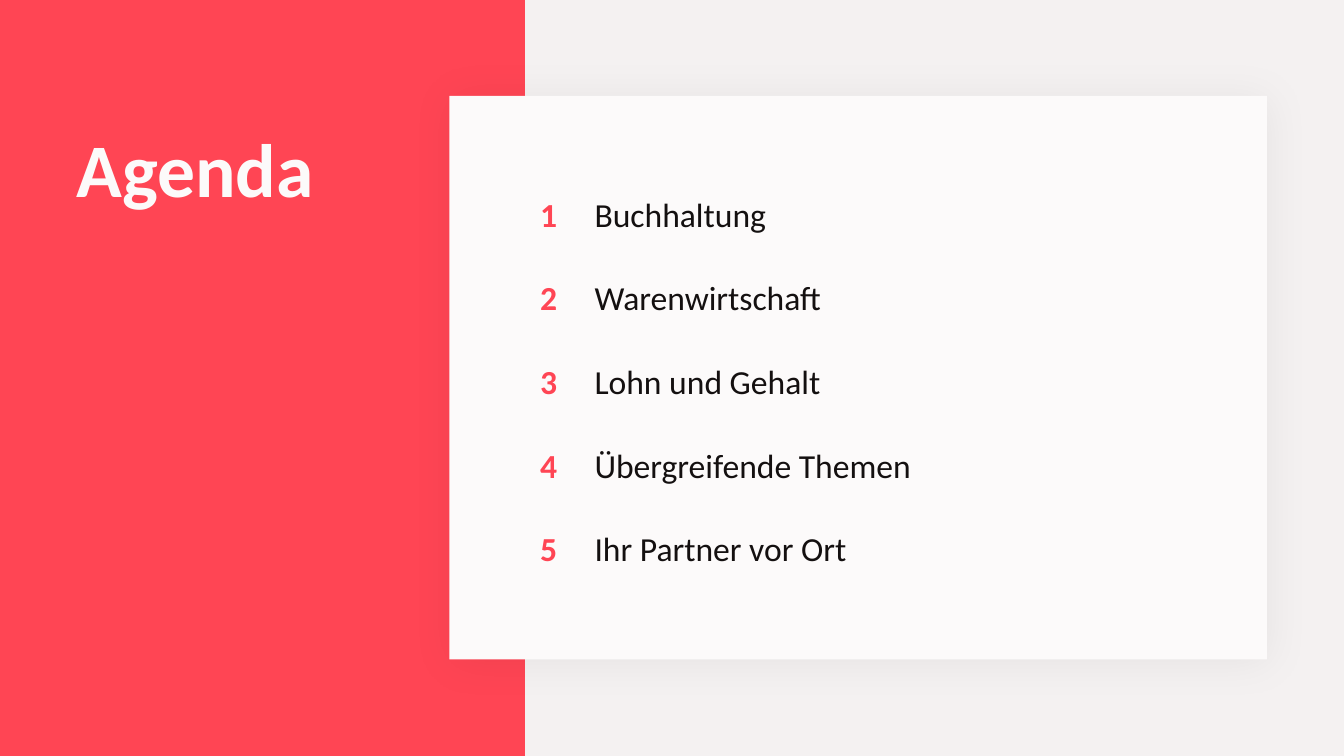
import pptx
import pptx.util
import pptx.dml.color
import pptx.enum.shapes
import pptx.enum.text
import pptx.oxml
import pptx.oxml.ns

Pt = pptx.util.Pt

# Content
TITLE = "Agenda"
TOPICS = ["Buchhaltung", "Warenwirtschaft", "Lohn und Gehalt",
          "Übergreifende Themen", "Ihr Partner vor Ort"]

# Design: lengths in points
FONT = "Calibri"
RED, PAPER, INK, GROUND = "FF4554", "FCFAFA", "141010", "F4F1F1"
SLIDE_W, SLIDE_H = 960, 540
PANEL_W = 375
CARD = (321, 68.5, 584, 402.5)
TITLE_BOX = (54.75, 95.75, 227.5, 97.25)
TABLE_TOP, ROW_H = 122.5, 59.8
COL_WIDTHS = (42.5, 433.5)
NO_STYLE = "{2D5ABB26-0587-4C30-8999-92F81FD0307C}"
SHADOW = (
    '<a:effectLst %s><a:outerShdw blurRad="391160" dist="38100" dir="2700000">'
    '<a:srgbClr val="000000"><a:alpha val="5000"/></a:srgbClr>'
    '</a:outerShdw></a:effectLst>' % pptx.oxml.ns.nsdecls("a"))


def rgb(value):
    return pptx.dml.color.RGBColor.from_string(value)


def add_rect(s, box, color):
    sp = s.shapes.add_shape(pptx.enum.shapes.MSO_SHAPE.RECTANGLE,
                            *map(Pt, box))
    sp.shadow.inherit = False
    sp.fill.solid()
    sp.fill.fore_color.rgb = rgb(color)
    sp.line.fill.background()
    return sp


def set_text(tf, text, size, color, bold, spacing):
    p = tf.paragraphs[0]
    p.alignment = pptx.enum.text.PP_ALIGN.LEFT
    p.line_spacing = spacing
    r = p.add_run()
    r.text = text
    r.font.name = FONT
    r.font.size = Pt(size)
    r.font.bold = bold
    r.font.color.rgb = rgb(color)


prs = pptx.Presentation()
prs.slide_width, prs.slide_height = Pt(SLIDE_W), Pt(SLIDE_H)
s = prs.slides.add_slide(prs.slide_layouts[5])
s.background.fill.solid()
s.background.fill.fore_color.rgb = rgb(GROUND)

# Red panel and card with a soft shadow
add_rect(s, (0, 0, PANEL_W, SLIDE_H), RED)
card = add_rect(s, CARD, PAPER)
sp_pr = card._element.spPr
sp_pr.remove(sp_pr.find(pptx.oxml.ns.qn("a:effectLst")))
sp_pr.append(pptx.oxml.parse_xml(SHADOW))

# Title, brought in front of the panel
title = s.shapes.title
s.shapes._spTree.append(title._element)
title.left, title.top, title.width, title.height = map(Pt, TITLE_BOX)
tf = title.text_frame
tf.word_wrap = True
tf.auto_size = pptx.enum.text.MSO_AUTO_SIZE.NONE
tf.vertical_anchor = pptx.enum.text.MSO_ANCHOR.TOP
tf.margin_left = tf.margin_top = tf.margin_right = tf.margin_bottom = 0
set_text(tf, TITLE, 54, PAPER, True, 0.88)

# Numbered topics
table = s.shapes.add_table(
    len(TOPICS), len(COL_WIDTHS), Pt(PANEL_W), Pt(TABLE_TOP),
    Pt(sum(COL_WIDTHS)), Pt(ROW_H * len(TOPICS))).table
table.first_row = table.horz_banding = False
table.first_col = True
table._tbl.tblPr.find(pptx.oxml.ns.qn("a:tableStyleId")).text = NO_STYLE
for column, width in zip(table.columns, COL_WIDTHS):
    column.width = Pt(width)
for i, topic in enumerate(TOPICS):
    table.rows[i].height = Pt(ROW_H)
    number_cell, topic_cell = table.cell(i, 0), table.cell(i, 1)
    number_cell.margin_left = number_cell.margin_right = Pt(10.8)
    number_cell.margin_top = number_cell.margin_bottom = Pt(10.8)
    for cell, text, color, bold in ((number_cell, str(i + 1), RED, True),
                                    (topic_cell, topic, INK, False)):
        cell.fill.background()
        cell.vertical_anchor = pptx.enum.text.MSO_ANCHOR.MIDDLE
        set_text(cell.text_frame, text, 24, color, bold, 1.11)

prs.save("out.pptx")
